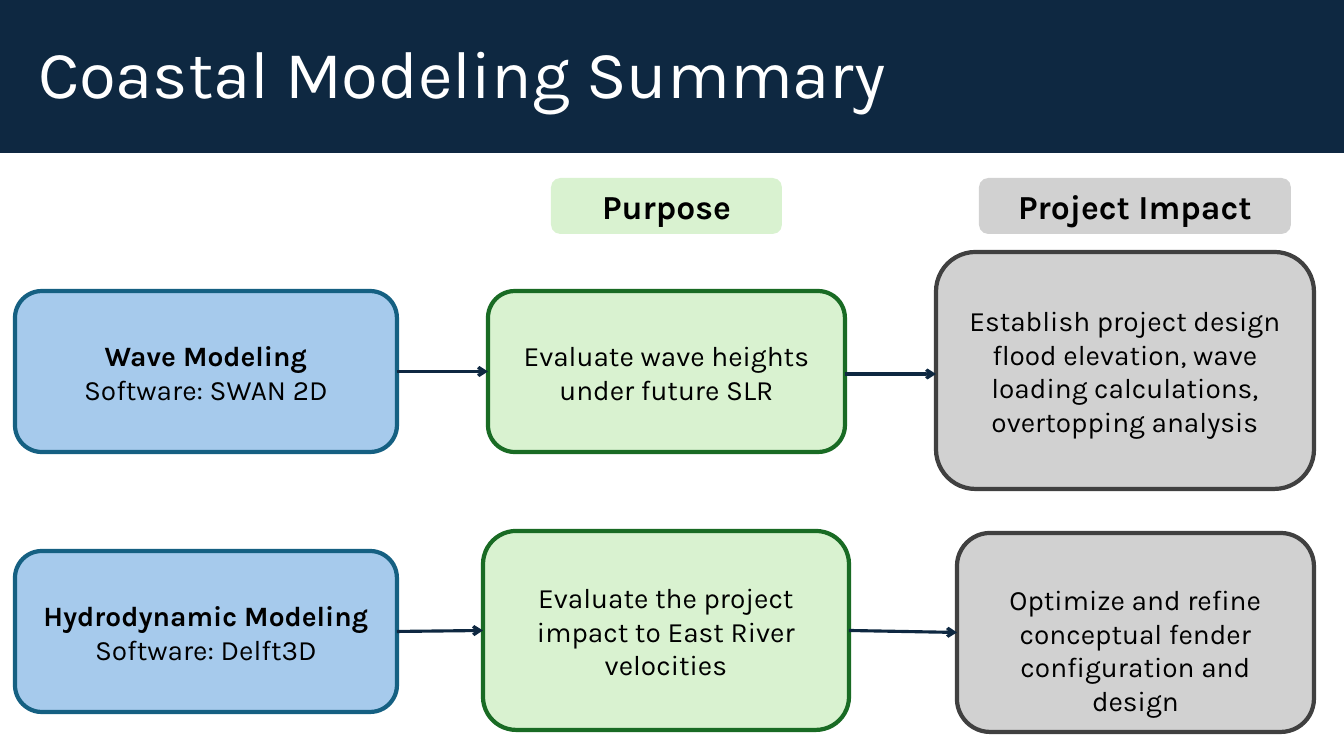
from dataclasses import dataclass

from lxml import etree
from pptx import Presentation
from pptx import util as u
from pptx.dml.color import RGBColor
from pptx.enum import shapes, text
from pptx.oxml import ns

# Content: (left, top, width, height) in px, then the lines of text
TITLE = "Coastal Modeling Summary"
TITLE_BAR = (0, 0, 1344, 153)
HEADINGS = [
    ("purpose", (551, 178, 231, 56), "Purpose"),
    ("impact", (979, 178, 312, 56), "Project Impact"),
]
ROWS = [
    [
        ("model", (15, 291, 382, 161), ["Wave Modeling", "Software: SWAN 2D"]),
        ("purpose", (488, 291, 357, 161),
         ["Evaluate wave heights under future SLR"]),
        ("impact", (936, 252, 378, 237),
         ["Establish project design flood elevation, wave loading "
          "calculations, overtopping analysis"]),
    ],
    [
        ("model", (15, 551, 382, 161),
         ["Hydrodynamic Modeling", "Software: Delft3D"]),
        ("purpose", (483, 531, 366, 199),
         ["Evaluate the project impact to East River velocities"]),
        ("impact", (957, 533, 357, 199),
         ["Optimize and refine conceptual fender configuration and design"]),
    ],
]
# Arrows that run level at a set height: (row, column) of the start box
LEVEL_ARROWS = {(0, 1): 374}


@dataclass(frozen=True)
class Theme:
    font: str = "Karla"
    navy: str = "0E2841"
    white: str = "FFFFFF"
    black: str = "000000"
    title_size: int = 48
    heading_size: int = 24
    body_size: int = 20
    outline: float = 3
    arrow: float = 2.25


THEME = Theme()
FILLS = {"model": "A6CAEC", "purpose": "D9F2D0", "impact": "D1D1D1"}
OUTLINES = {"model": "156082", "purpose": "196B24", "impact": "404040"}


def px(length):
    return u.Emu(round(length * 914400 / 100.8))


def apply(target, values):
    for name, value in values.items():
        setattr(target, name, value)


def paint(shape, fill, outline=None):
    shape.fill.solid()
    shape.fill.fore_color.rgb = RGBColor.from_string(fill)
    if outline:
        shape.line.color.rgb = RGBColor.from_string(outline)
        shape.line.width = u.Pt(THEME.outline)
    else:
        shape.line.fill.background()


def write(shape, lines, size, color, align, bold, frame_format):
    frame = shape.text_frame
    apply(frame, {"word_wrap": True, "auto_size": text.MSO_AUTO_SIZE.NONE,
                  **frame_format})
    for index, line in enumerate(lines):
        para = frame.paragraphs[0] if index == 0 else frame.add_paragraph()
        para.alignment = align
        span = para.add_run()
        span.text = line
        apply(span.font, {"name": THEME.font, "size": u.Pt(size),
                          "bold": bold and index == 0})
        span.font.color.rgb = RGBColor.from_string(color)


def add_box(page, kind, place, lines, size, bold, top_inset, outline=None):
    box = page.shapes.add_shape(
        shapes.MSO_SHAPE.ROUNDED_RECTANGLE, *map(px, place))
    box.shadow.inherit = False
    paint(box, FILLS[kind], outline)
    write(box, lines, size, THEME.black, text.PP_ALIGN.CENTER, bold,
          {"vertical_anchor": text.MSO_ANCHOR.TOP,
           "margin_top": px(top_inset)})
    return box


def add_arrow(page, start, end, level=None):
    start_y = start.top + start.height // 2 if level is None else px(level)
    end_y = end.top + end.height // 2 if level is None else px(level)
    arrow = page.shapes.add_connector(
        shapes.MSO_CONNECTOR.STRAIGHT,
        start.left + start.width, start_y, end.left, end_y)
    if level is None:
        arrow.begin_connect(start, 3)
        arrow.end_connect(end, 1)
    arrow.line.color.rgb = RGBColor.from_string(THEME.navy)
    arrow.line.width = u.Pt(THEME.arrow)
    etree.SubElement(arrow.line._get_or_add_ln(), ns.qn("a:tailEnd"),
                     type="arrow")
    etree.SubElement(arrow._element.spPr, ns.qn("a:effectLst"))


def main():
    deck = Presentation()
    apply(deck, {"slide_width": px(1344), "slide_height": px(756)})
    page = deck.slides.add_slide(deck.slide_layouts[5])

    # Title bar
    title = page.shapes.title
    apply(title, dict(zip(("left", "top", "width", "height"),
                          map(px, TITLE_BAR))))
    paint(title, THEME.navy)
    write(title, [TITLE], THEME.title_size, THEME.white,
          text.PP_ALIGN.LEFT, False,
          {"vertical_anchor": text.MSO_ANCHOR.MIDDLE, "margin_left": px(38)})
    title.text_frame.paragraphs[0].line_spacing = 0.9

    # Column headings
    for kind, place, heading in HEADINGS:
        add_box(page, kind, place, [heading], THEME.heading_size, True, 5)

    # Flow rows: model, purpose, impact, joined by arrows
    for row, cells in enumerate(ROWS):
        boxes = [add_box(page, kind, place, lines, THEME.body_size,
                         kind == "model", 40, OUTLINES[kind])
                 for kind, place, lines in cells]
        for column, (start, end) in enumerate(zip(boxes, boxes[1:])):
            add_arrow(page, start, end, LEVEL_ARROWS.get((row, column)))

    deck.save("out.pptx")


if __name__ == "__main__":
    main()
